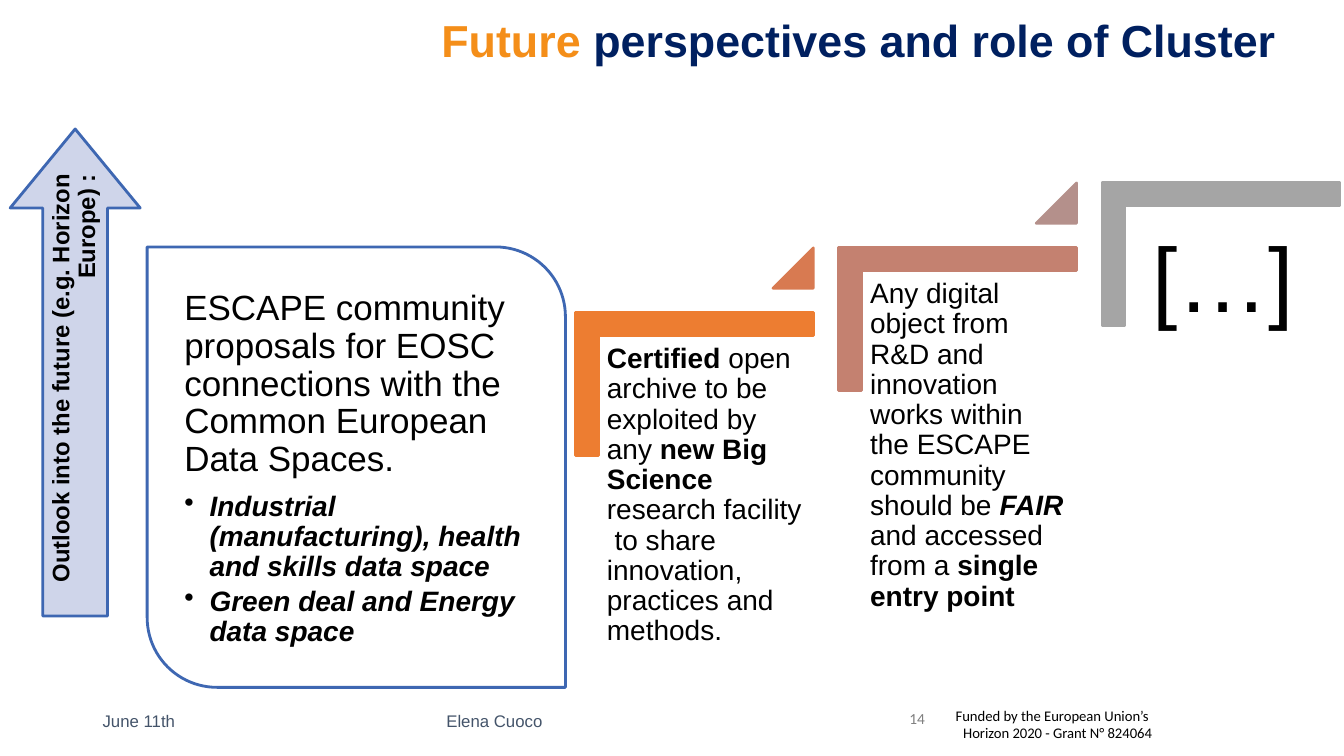
from dataclasses import dataclass

from lxml import etree
from pptx import Presentation
from pptx.dml.color import RGBColor
from pptx.enum.shapes import MSO_SHAPE
from pptx.enum.text import MSO_ANCHOR, PP_ALIGN
from pptx.oxml.ns import qn
from pptx.util import Pt

ARROW = MSO_SHAPE.RIGHT_ARROW
CORNER = MSO_SHAPE.CORNER
PANEL = MSO_SHAPE.ROUND_2_DIAG_RECTANGLE
TRIANGLE = MSO_SHAPE.ISOSCELES_TRIANGLE
TOP, MIDDLE = MSO_ANCHOR.TOP, MSO_ANCHOR.MIDDLE
LEFT, CENTER, RIGHT = PP_ALIGN.LEFT, PP_ALIGN.CENTER, PP_ALIGN.RIGHT


@dataclass(frozen=True)
class Theme:
    font: str = "Arial"
    small_font: str = "Calibri"
    black: str = "000000"
    white: str = "FFFFFF"
    navy: str = "002060"
    amber: str = "F48E19"
    blue: str = "3E67B2"
    pale: str = "CFD5EA"
    slate: str = "44546A"
    gray: str = "7F7F7F"
    steps: tuple = ("ED7D31", "C48170", "A5A5A5")
    risers: tuple = ("D87A51", "B4908B")
    title: float = 32
    lead: float = 25
    body: float = 20
    arrow: float = 17
    ellipsis: float = 65
    footer: float = 12
    number: float = 11
    grant: float = 10.5
    line: float = 2
    spacing: float = 0.9


T = Theme()


def add_shape(s, kind, box, fill, line, adjustments, rotation=0):
    sp = s.shapes.add_shape(kind, *map(Pt, box))
    sp.shadow.inherit = False
    sp.rotation = rotation
    sp.fill.solid()
    sp.fill.fore_color.rgb = RGBColor.from_string(fill)
    sp.line.color.rgb = RGBColor.from_string(line)
    sp.line.width = Pt(T.line)
    for i, value in enumerate(adjustments):
        sp.adjustments[i] = value


def add_box(s, box, margins=(7.2, 3.6), anchor=TOP, rotation=0):
    sp = s.shapes.add_textbox(*map(Pt, box))
    sp.rotation = rotation
    tf = sp.text_frame
    tf.word_wrap = True
    tf.vertical_anchor = anchor
    tf.margin_left = tf.margin_right = Pt(margins[0])
    tf.margin_top = tf.margin_bottom = Pt(margins[1])
    return tf


def add_paragraph(tf, runs, size, color=T.black, font=T.font, align=LEFT,
                  spacing=None, after=0, bullet=False):
    p = tf.paragraphs[0] if not tf.paragraphs[0].runs else tf.add_paragraph()
    if bullet:
        pPr = p._p.get_or_add_pPr()
        pPr.set("marL", str(Pt(18)))
        pPr.set("indent", str(-Pt(18)))
        etree.SubElement(pPr, qn("a:buChar")).set("char", "•")
    p.alignment = align
    p.line_spacing = spacing
    p.space_after = Pt(after)
    for text, style, *tint in runs:
        r = p.add_run()
        r.text = text
        r.font.name = font
        r.font.size = Pt(size)
        r.font.bold = "b" in style
        r.font.italic = "i" in style
        r.font.color.rgb = RGBColor.from_string(tint[0] if tint else color)


def add_footer(s):
    tf = add_box(s, (537.8, 501.1, 292.3, 32.4))
    for line in ("Funded by the European Union’s ", "Horizon 2020 - Grant N° 824064"):
        add_paragraph(tf, [(line, "")], T.grant, font=T.small_font, align=RIGHT)
    tf = add_box(s, (626.4, 503.3, 57.6, 28.8))
    add_paragraph(tf, [("14", "")], T.number, T.gray, T.small_font, CENTER)
    for text, left, width, align in (("June 11th", 66.2, 123.1, LEFT),
                                     ("Elena Cuoco", 205.9, 294.5, CENTER)):
        tf = add_box(s, (left, 500.4, width, 28.8), anchor=MIDDLE)
        add_paragraph(tf, [(text, "")], T.footer, T.slate, align=align)


def add_outlook_arrow(s):
    add_shape(s, ARROW, (-120.2, 219.6, 347.8, 92.9), T.pale, T.blue, (0.498, 0.607), 270)
    tf = add_box(s, (-106.6, 256.3, 319.7, 46.1), (5, 5), MIDDLE, 270)
    add_paragraph(tf, [("Outlook into the future (e.g. Horizon Europe) :", "b")],
                  T.arrow, align=RIGHT, spacing=T.spacing)


def add_proposals(s):
    add_shape(s, PANEL, (105.1, 176.4, 298.8, 314.6), T.white, T.blue, (0, 0.167))
    tf = add_box(s, (124.6, 200.2, 259.2, 267.1), (7.2, 7.2))
    add_paragraph(tf, [("ESCAPE community proposals for EOSC connections with the "
                        "Common European Data Spaces.", "")],
                  T.lead, spacing=T.spacing, after=9)
    for text in ("Industrial (manufacturing), health and skills data space",
                 "Green deal and Energy data space"):
        add_paragraph(tf, [(text, "bi")], T.body, spacing=T.spacing, after=3.5, bullet=True)


def add_step(s, index, runs, size, margin):
    dx, dy = 188 * index, -46.4 * index
    color = T.steps[index]
    add_shape(s, CORNER, (445 + dx, 189.4 + dy, 102.2, 170), color, color, (0.161, 0.161), 90)
    tf = add_box(s, (427.7 + dx, 240.2 + dy, 153.4, 134.6), (margin, margin))
    add_paragraph(tf, runs, size, spacing=T.spacing)
    if index < len(T.risers):
        color = T.risers[index]
        add_shape(s, TRIANGLE, (552.2 + dx, 177.1 + dy, 28.8, 28.8), color, color, (1,))


def main():
    prs = Presentation()
    prs.slide_width, prs.slide_height = Pt(960), Pt(540)
    s = prs.slides.add_slide(prs.slide_layouts[6])
    add_footer(s)
    add_proposals(s)
    add_outlook_arrow(s)
    steps = (
        ([("Certified", "b"), (" open archive to be exploited by any ", ""),
          ("new Big Science ", "b"),
          ("research facility  to share innovation, practices and methods.", "")],
         T.body, 5.8),
        ([("Any digital object from R&D and innovation works within the ESCAPE "
           "community should be ", ""),
          ("FAIR ", "bi"), ("and accessed from a ", ""), ("single entry point", "b")],
         T.body, 5.8),
        ([("[…]", "")], T.ellipsis, 19.4),
    )
    for index, (runs, size, margin) in enumerate(steps):
        add_step(s, index, runs, size, margin)
    tf = add_box(s, (308.2, 5.8, 750.2, 46.1))
    add_paragraph(tf, [("Future ", "b", T.amber),
                       ("perspectives and role of Cluster", "b")], T.title, T.navy)
    prs.save("out.pptx")


if __name__ == "__main__":
    main()
